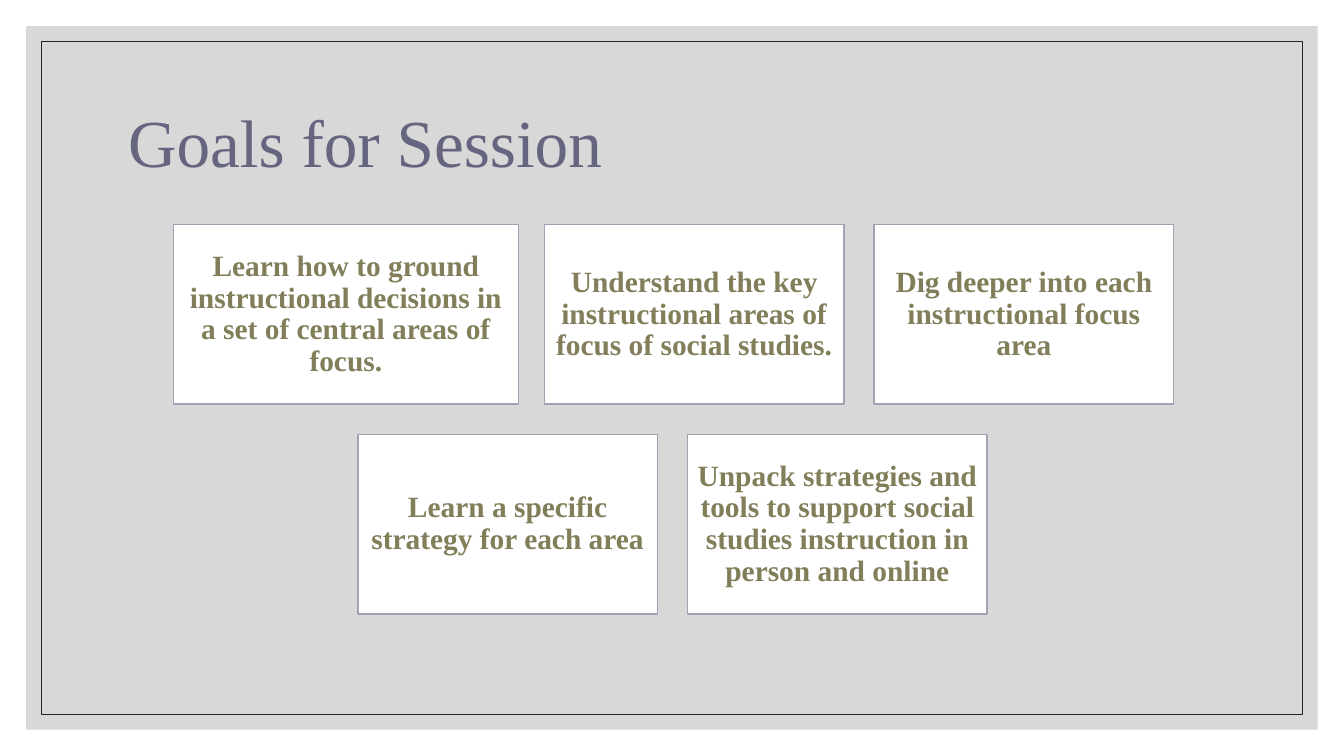
from lxml import etree
from pptx import Presentation
from pptx.dml.color import RGBColor
from pptx.enum import shapes, text
from pptx.oxml.ns import qn
from pptx.util import Inches, Pt

TITLE = "Goals for Session"
CARD_WIDTH, WIDE_CARD, CARD_HEIGHT = 2.97, 3.42, 1.78
GAP, WIDE_CARD_GAP = 0.3, 0.26
GOAL_ROWS = [
    (1.72, [
        ("Learn how to ground instructional decisions in a set of central areas of focus.", WIDE_CARD, WIDE_CARD_GAP),
        ("Understand the key instructional areas of focus of social studies.", CARD_WIDTH, GAP),
        ("Dig deeper into each instructional focus area", CARD_WIDTH, GAP),
    ]),
    (3.55, [
        ("Learn a specific strategy for each area", CARD_WIDTH, GAP),
        ("Unpack strategies and tools to support social studies instruction in person and online", CARD_WIDTH, GAP),
    ]),
]
SLIDE_WIDTH, SLIDE_HEIGHT = 13.33, 7.5
CARDS_TOP = 2.23
PANEL_MARGIN, FRAME_MARGIN = 0.26, 0.41

WHITE = RGBColor(0xFF, 0xFF, 0xFF)
PANEL_GRAY = RGBColor(0xBF, 0xBF, 0xBF)
FRAME_BLACK = RGBColor(0x26, 0x26, 0x26)
TITLE_PURPLE = RGBColor(0x65, 0x65, 0x80)
CARD_BORDER = RGBColor(0xA2, 0xA2, 0xB5)
GOAL_OLIVE = RGBColor(0x81, 0x7E, 0x59)

TITLE_FONT = {"name": "Times New Roman", "size": Pt(48), "bold": False}
GOAL_FONT = {"name": "Times New Roman", "size": Pt(21), "bold": True}
CARD_FRAME = {
    "word_wrap": True,
    "vertical_anchor": text.MSO_ANCHOR.MIDDLE,
    "margin_left": Inches(0.08),
    "margin_right": Inches(0.08),
    "margin_top": Inches(0.09),
    "margin_bottom": Inches(0.09),
}
TITLE_FRAME = {
    "word_wrap": True,
    "auto_size": text.MSO_AUTO_SIZE.NONE,
    "vertical_anchor": text.MSO_ANCHOR.MIDDLE,
}


def set_all(target, values):
    for name, value in values.items():
        setattr(target, name, value)


def add_rectangle(slide, box, fill=None, line=None, weight=1):
    rectangle = slide.shapes.add_shape(shapes.MSO_SHAPE.RECTANGLE, *map(Inches, box))
    rectangle.shadow.inherit = False
    if fill is None:
        rectangle.fill.background()
    else:
        rectangle.fill.solid()
        rectangle.fill.fore_color.rgb = fill
    if line is None:
        rectangle.line.fill.background()
    else:
        rectangle.line.color.rgb = line
        rectangle.line.width = Pt(weight)
    return rectangle


def write_text(shape, wording, frame, font, color, alignment):
    set_all(shape.text_frame, frame)
    shape.text_frame.text = wording
    paragraph = shape.text_frame.paragraphs[0]
    set_all(paragraph, {"alignment": alignment, "line_spacing": 0.9})
    set_all(paragraph.runs[0].font, font)
    paragraph.runs[0].font.color.rgb = color


def inset_box(margin):
    return margin, margin, SLIDE_WIDTH - 2 * margin, SLIDE_HEIGHT - 2 * margin


def add_backdrop(slide):
    panel = add_rectangle(slide, inset_box(PANEL_MARGIN), fill=PANEL_GRAY)
    panel_color = panel.fill._xPr.find(qn("a:solidFill"))[0]
    etree.SubElement(panel_color, qn("a:alpha"), val="60000")
    add_rectangle(slide, inset_box(FRAME_MARGIN), line=FRAME_BLACK, weight=0.5)


def add_title(slide):
    title = slide.shapes.title
    slide.shapes._spTree.append(title._element)
    box = zip(("left", "top", "width", "height"), map(Inches, (1.17, 0.7, 11, 1.5)))
    set_all(title, dict(box))
    write_text(title, TITLE, TITLE_FRAME, TITLE_FONT, TITLE_PURPLE, text.PP_ALIGN.LEFT)


def add_goals(slide):
    for row, (left, goals) in enumerate(GOAL_ROWS):
        top = CARDS_TOP + row * (CARD_HEIGHT + GAP)
        for goal, width, gap in goals:
            card = add_rectangle(slide, (left, top, width, CARD_HEIGHT), WHITE, CARD_BORDER)
            write_text(card, goal, CARD_FRAME, GOAL_FONT, GOAL_OLIVE, text.PP_ALIGN.CENTER)
            left += width + gap


def main():
    presentation = Presentation()
    presentation.slide_width = Inches(SLIDE_WIDTH)
    presentation.slide_height = Inches(SLIDE_HEIGHT)
    slide = presentation.slides.add_slide(presentation.slide_layouts[5])
    add_backdrop(slide)
    add_title(slide)
    add_goals(slide)
    presentation.save("out.pptx")


if __name__ == "__main__":
    main()
